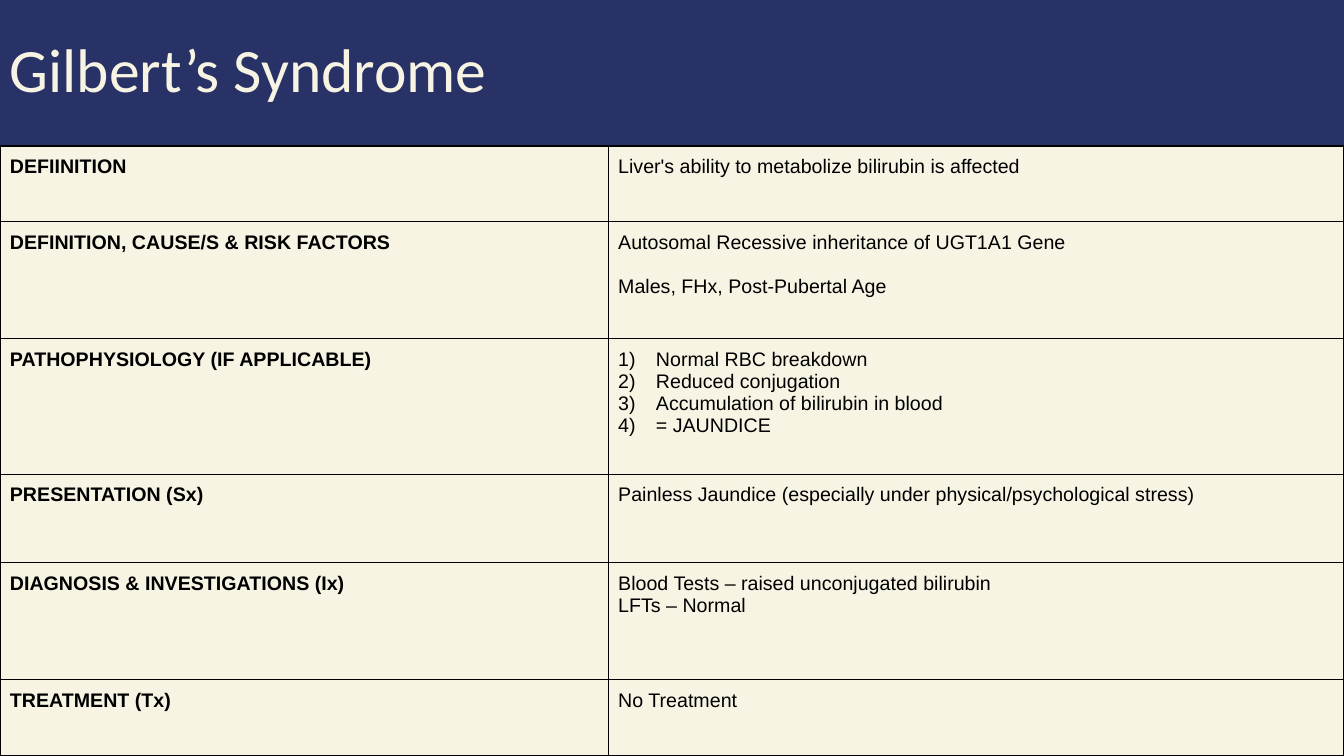
from dataclasses import dataclass

from lxml.etree import SubElement
from pptx import Presentation
from pptx.dml.color import RGBColor
from pptx.enum.text import MSO_ANCHOR, MSO_AUTO_SIZE, PP_ALIGN
from pptx.oxml import parse_xml
from pptx.oxml.ns import nsdecls, qn
from pptx.slide import Slide
from pptx.table import _Cell
from pptx.text.text import _Paragraph
from pptx.util import Cm, Pt


@dataclass(frozen=True)
class Theme:
    navy: RGBColor = RGBColor(0x29, 0x32, 0x67)
    cream: RGBColor = RGBColor(0xF8, 0xF4, 0xE4)
    ink: RGBColor = RGBColor(0, 0, 0)
    title_font: str = "Calibri"
    body_font: str = "Arial"
    title_size: Pt = Pt(44)
    body_size: Pt = Pt(14)
    paragraph_gap: Pt = Pt(16)
    border: Pt = Pt(1)
    inset: Cm = Cm(0.25)


@dataclass(frozen=True)
class Topic:
    heading: str
    details: tuple[str, ...]
    height: float
    numbered: bool = False
    spaced: bool = False


THEME = Theme()
SLIDE_WIDTH, SLIDE_HEIGHT = Cm(33.87), Cm(19.05)
BANNER_HEIGHT = Cm(3.68)
HEADING_WIDTH = Cm(15.33)
NUMBER_INDENT = Cm(0.95)

TOPICS = (
    Topic("DEFIINITION", ("Liver's ability to metabolize bilirubin is affected",), 1.91),
    Topic(
        "DEFINITION, CAUSE/S & RISK FACTORS",
        ("Autosomal Recessive inheritance of UGT1A1 Gene", "Males, FHx, Post-Pubertal Age"),
        2.94,
        spaced=True,
    ),
    Topic(
        "PATHOPHYSIOLOGY (IF APPLICABLE)",
        (
            "Normal RBC breakdown",
            "Reduced conjugation",
            "Accumulation of bilirubin in blood",
            "= JAUNDICE",
        ),
        3.42,
        numbered=True,
    ),
    Topic(
        "PRESENTATION (Sx)",
        ("Painless Jaundice (especially under physical/psychological stress)",),
        2.23,
    ),
    Topic(
        "DIAGNOSIS & INVESTIGATIONS (Ix)",
        ("Blood Tests – raised unconjugated bilirubin", "LFTs – Normal"),
        2.95,
    ),
    Topic("TREATMENT (Tx)", ("No Treatment",), 1.91),
)


def add_run(paragraph: _Paragraph, text: str, font: str, size: Pt,
            color: RGBColor, bold: bool = False) -> None:
    run = paragraph.add_run()
    run.text = text
    run.font.name = font
    run.font.size = size
    run.font.bold = bold
    run.font.color.rgb = color


def number_paragraph(paragraph: _Paragraph) -> None:
    properties = paragraph._p.get_or_add_pPr()
    properties.set("marL", str(NUMBER_INDENT))
    properties.set("indent", str(-NUMBER_INDENT))
    bullet_color = SubElement(properties, qn("a:buClr"))
    SubElement(bullet_color, qn("a:srgbClr"), val=str(THEME.ink))
    SubElement(properties, qn("a:buFont"), typeface=THEME.body_font)
    SubElement(properties, qn("a:buAutoNum"), type="arabicParenR")


def add_borders(cell: _Cell) -> None:
    properties = cell._tc.get_or_add_tcPr()
    for position, side in enumerate(("lnL", "lnR", "lnT", "lnB")):
        properties.insert(position, parse_xml(
            f'<a:{side} {nsdecls("a")} w="{THEME.border}"><a:solidFill>'
            f'<a:srgbClr val="{THEME.ink}"/></a:solidFill></a:{side}>'
        ))


def fill_cell(cell: _Cell, lines: tuple[str, ...], bold: bool = False,
              numbered: bool = False, spaced: bool = False) -> None:
    cell.margin_left = cell.margin_right = THEME.inset
    cell.margin_top = cell.margin_bottom = THEME.inset
    cell.vertical_anchor = MSO_ANCHOR.TOP
    cell.fill.solid()
    cell.fill.fore_color.rgb = THEME.cream
    add_borders(cell)
    frame = cell.text_frame
    for index, line in enumerate(lines):
        paragraph = frame.add_paragraph() if index else frame.paragraphs[0]
        if spaced and index:
            paragraph.space_before = THEME.paragraph_gap
        if numbered:
            number_paragraph(paragraph)
        add_run(paragraph, line, THEME.body_font, THEME.body_size, THEME.ink, bold)


def add_banner(slide: Slide, text: str) -> None:
    banner = slide.shapes.title
    banner.left, banner.top = Cm(0), Cm(0)
    banner.width, banner.height = SLIDE_WIDTH, BANNER_HEIGHT
    banner.fill.solid()
    banner.fill.fore_color.rgb = THEME.navy
    frame = banner.text_frame
    frame.auto_size = MSO_AUTO_SIZE.NONE
    frame.vertical_anchor = MSO_ANCHOR.MIDDLE
    frame.margin_left = frame.margin_right = THEME.inset
    heading = frame.paragraphs[0]
    heading.alignment = PP_ALIGN.LEFT
    heading.line_spacing = 0.9
    add_run(heading, text, THEME.title_font, THEME.title_size, THEME.cream)


def add_topics(slide: Slide, topics: tuple[Topic, ...]) -> None:
    overview = slide.shapes.add_table(
        len(topics), 2, Cm(0), BANNER_HEIGHT, SLIDE_WIDTH, SLIDE_HEIGHT - BANNER_HEIGHT
    ).table
    overview.first_row = overview.horz_banding = False
    overview.columns[0].width = HEADING_WIDTH
    overview.columns[1].width = SLIDE_WIDTH - HEADING_WIDTH
    for row, topic in enumerate(topics):
        overview.rows[row].height = Cm(topic.height)
        fill_cell(overview.cell(row, 0), (topic.heading,), bold=True)
        fill_cell(overview.cell(row, 1), topic.details,
                  numbered=topic.numbered, spaced=topic.spaced)


def main() -> None:
    deck = Presentation()
    deck.slide_width, deck.slide_height = SLIDE_WIDTH, SLIDE_HEIGHT
    slide = deck.slides.add_slide(deck.slide_layouts[5])

    # Background
    slide.background.fill.solid()
    slide.background.fill.fore_color.rgb = THEME.cream

    # Title banner and condition overview
    add_banner(slide, "Gilbert’s Syndrome")
    add_topics(slide, TOPICS)

    deck.save("out.pptx")


if __name__ == "__main__":
    main()
